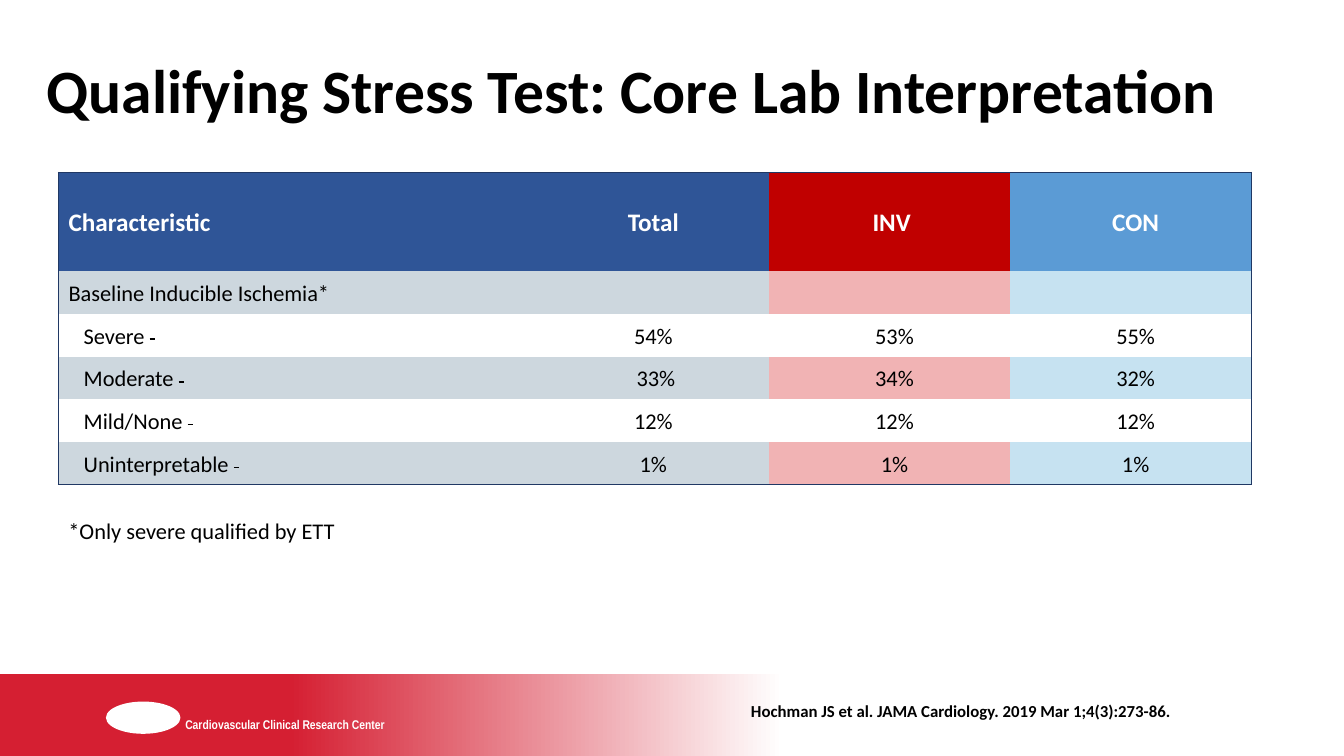
"""Builds the slide on core lab interpretation of the qualifying stress test."""
from lxml import etree
from pptx import Presentation
from pptx.dml.color import RGBColor
from pptx.enum.shapes import MSO_SHAPE
from pptx.enum.text import MSO_ANCHOR, MSO_AUTO_SIZE, PP_ALIGN
from pptx.oxml.ns import qn
from pptx.util import Inches, Pt

TITLE = "Qualifying Stress Test: Core Lab Interpretation"
HEADER = ("Characteristic", "Total", "INV ", "CON")
ROWS = [
    ("Baseline Inducible Ischemia*", "", "", ""),
    ("Severe ", "54%", "53%", "55%"),
    ("Moderate ", " 33%", "34%", "32%"),
    ("Mild/None ", "12%", "12%", "12%"),
    ("Uninterpretable ", "1%", "1%", "1%"),
]
FOOTNOTE = "*Only severe qualified by ETT"
CENTER = "Cardiovascular Clinical Research Center"
CITATION = "Hochman JS et al. JAMA Cardiology. 2019 Mar 1;4(3):273-86."

BLACK = RGBColor(0x00, 0x00, 0x00)
WHITE = RGBColor(0xFF, 0xFF, 0xFF)
RED = RGBColor(0xD5, 0x1F, 0x32)
NAVY = RGBColor(0x20, 0x38, 0x64)
BLUE = RGBColor(0x2F, 0x55, 0x97)
CRIMSON = RGBColor(0xC0, 0x00, 0x00)
SKY = RGBColor(0x5B, 0x9B, 0xD5)
GREY = RGBColor(0xCD, 0xD7, 0xDE)
PINK = RGBColor(0xF1, 0xB3, 0xB4)
PALE = RGBColor(0xC6, 0xE2, 0xF1)
HEADER_FILLS = (BLUE, BLUE, CRIMSON, SKY)
BAND_FILLS = (GREY, GREY, PINK, PALE)

LEFT, CENTRE = PP_ALIGN.LEFT, PP_ALIGN.CENTER
MIDDLE = MSO_ANCHOR.MIDDLE
NO_FIT = MSO_AUTO_SIZE.NONE
RECT, OVAL = MSO_SHAPE.RECTANGLE, MSO_SHAPE.OVAL

W, H = Inches(13.33), Inches(7.5)
COL_SHARES = (4.65, 2.39, 2.39, 2.39)
HEADER_H = Inches(0.98)


def box(x, y, w, h):
    """Turn percentages of the slide into left, top, width and height."""
    return [int(W * x / 100), int(H * y / 100), int(W * w / 100), int(H * h / 100)]


def write(tf, text, size=16, color=BLACK, bold=False, font="Calibri",
          align=LEFT, spacing=None):
    """Write one formatted paragraph and return it."""
    tf.word_wrap = True
    p = tf.paragraphs[0]
    p.alignment = align
    if spacing:
        p.line_spacing = spacing
    p.font.size = Pt(size)
    if text:
        r = p.add_run()
        r.text = text
        r.font.size, r.font.bold, r.font.name = Pt(size), bold, font
        r.font.color.rgb = color
    return p


def add_text(s, place, text, **fmt):
    """Add a text box."""
    tf = s.shapes.add_textbox(*place).text_frame
    tf.auto_size = NO_FIT
    write(tf, text, **fmt)


def add_plain(s, kind, place):
    """Add a white shape without line or shadow."""
    sp = s.shapes.add_shape(kind, *place)
    sp.shadow.inherit = False
    sp.line.fill.background()
    sp.fill.solid()
    sp.fill.fore_color.rgb = WHITE
    return sp


def set_borders(cell, drawn):
    """Draw the named sides of a cell and clear the others."""
    tcPr = cell._tc.get_or_add_tcPr()
    for side in "LRTB":
        ln = etree.SubElement(tcPr, qn("a:ln" + side), w=str(Pt(1)))
        if side in drawn:
            fill = etree.SubElement(ln, qn("a:solidFill"))
            etree.SubElement(fill, qn("a:srgbClr"), val=str(NAVY))
        else:
            etree.SubElement(ln, qn("a:noFill"))


def add_results(s, place):
    """Add the results table."""
    data = [HEADER] + ROWS
    n_rows, n_cols = len(data), len(HEADER)
    table = s.shapes.add_table(n_rows, n_cols, *place).table
    for column, share in zip(table.columns, COL_SHARES):
        column.width = int(place[2] * share / sum(COL_SHARES))
    for i, values in enumerate(data):
        head = i == 0
        table.rows[i].height = HEADER_H if head else (place[3] - HEADER_H) // len(ROWS)
        for j, text in enumerate(values):
            cell = table.cell(i, j)
            edges = {"L": j == 0, "R": j == n_cols - 1, "T": head, "B": i == n_rows - 1}
            set_borders(cell, [side for side, on in edges.items() if on])
            cell.fill.solid()
            band = BAND_FILLS[j] if i % 2 else WHITE
            cell.fill.fore_color.rgb = HEADER_FILLS[j] if head else band
            cell.vertical_anchor = MIDDLE
            cell.margin_left = cell.margin_right = cell.margin_bottom = 0
            cell.margin_top = 0 if head else Inches(0.01)
            p = write(cell.text_frame, text, size=18 if head else 16,
                      color=WHITE if head else BLACK, bold=head,
                      align=CENTRE if j else LEFT, spacing=1.07 if head else 1.06)
            pPr = p._p.get_or_add_pPr()
            pPr.set("marL", str(Inches(0.1)))
            sub_item = i > 1 and j == 0
            pPr.set("indent", str(Inches(0.15) if sub_item else 0))
            if sub_item:
                r = p.add_run()
                r.text = " "
                r.font.size, r.font.name = Pt(16), "Calibri"
                r.font.color.rgb = BLACK
                r._r.get_or_add_rPr().set("strike", "sngStrike")


def main():
    """Build and save the slide."""
    prs = Presentation()
    prs.slide_width, prs.slide_height = W, H
    s = prs.slides.add_slide(prs.slide_layouts[5])

    band = add_plain(s, RECT, box(0, 89.2, 58.29, 10.8))
    band.fill.gradient()
    band.fill.gradient_angle = 180
    for stop, (position, color) in zip(band.fill.gradient_stops, [(0, WHITE), (0.63, RED)]):
        stop.position = position
        stop.color.rgb = color
    add_text(s, box(13.05, 94.13, 17.93, 2), CENTER, size=9, color=WHITE,
             bold=True, font="Arial Narrow")
    add_plain(s, OVAL, box(7.88, 92.8, 5.55, 4.27))

    title = s.shapes.title
    title.left, title.top, title.width, title.height = box(2.7, 5.33, 93.1, 14)
    title.text_frame.auto_size = NO_FIT
    title.text_frame.vertical_anchor = MIDDLE
    write(title.text_frame, TITLE, size=44, bold=True, spacing=0.9)

    add_text(s, box(4.35, 67.73, 69.24, 4.93), FOOTNOTE)
    add_results(s, box(4.35, 22.8, 88.75, 41.33))
    add_text(s, box(55.14, 92, 35.03, 4), CITATION, size=12, bold=True)
    prs.save("out.pptx")


if __name__ == "__main__":
    main()
